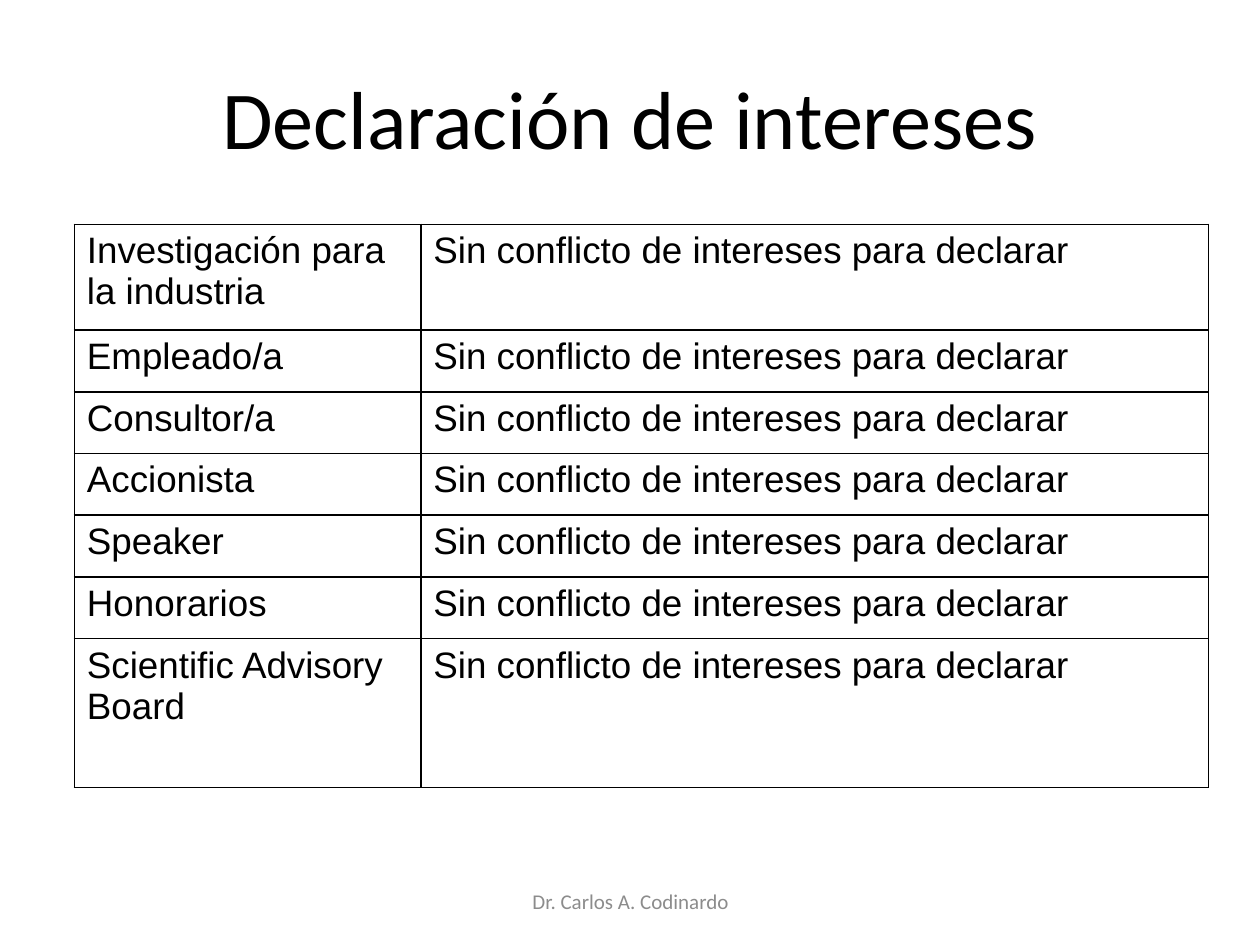
from lxml.etree import SubElement
from pptx import Presentation
from pptx.dml.color import RGBColor
from pptx.enum.text import MSO_ANCHOR, PP_ALIGN
from pptx.oxml.ns import qn
from pptx.util import Inches, Pt

BLACK = RGBColor(0x00, 0x00, 0x00)
GREY = RGBColor(0x8C, 0x8C, 0x8C)

TITLE = "Declaración de intereses"
AUTHOR = "Dr. Carlos A. Codinardo"
STATEMENT = "Sin conflicto de intereses para declarar"
ROW_HEIGHT = 0.49
INTERESTS = [
    ("Investigación para la industria", 0.84),
    ("Empleado/a", ROW_HEIGHT),
    ("Consultor/a", ROW_HEIGHT),
    ("Accionista", ROW_HEIGHT),
    ("Speaker", ROW_HEIGHT),
    ("Honorarios", ROW_HEIGHT),
    ("Scientific Advisory Board", 1.18),
]
COLUMN_WIDTHS = [2.75, 6.25]


def write(frame, text, *, size, font="Calibri", color=BLACK,
          align=PP_ALIGN.CENTER, anchor=MSO_ANCHOR.MIDDLE):
    frame.word_wrap = True
    frame.vertical_anchor = anchor
    paragraph = frame.paragraphs[0]
    paragraph.alignment = align
    run = paragraph.add_run()
    run.text = text
    run.font.size = Pt(size)
    run.font.name = font
    run.font.color.rgb = color


def outline(cell):
    properties = cell._tc.get_or_add_tcPr()
    for side in ("a:lnL", "a:lnR", "a:lnT", "a:lnB"):
        border = SubElement(properties, qn(side), w=str(Pt(1)))
        fill = SubElement(border, qn("a:solidFill"))
        SubElement(fill, qn("a:srgbClr"), val=str(BLACK))


def main():
    deck = Presentation()
    deck.slide_width, deck.slide_height = Inches(10), Inches(7.5)
    slide = deck.slides.add_slide(deck.slide_layouts[5])

    title = slide.shapes.title
    title.left, title.top = Inches(0.5), Inches(0.3)
    title.width, title.height = Inches(9), Inches(1.25)
    write(title.text_frame, TITLE, size=47)

    author = slide.shapes.add_textbox(
        Inches(3.42), Inches(6.95), Inches(3.17), Inches(0.4))
    write(author.text_frame, AUTHOR, size=12, color=GREY)

    table_height = sum(height for _, height in INTERESTS)
    declarations = slide.shapes.add_table(
        len(INTERESTS), len(COLUMN_WIDTHS), Inches(0.59), Inches(1.78),
        Inches(sum(COLUMN_WIDTHS)), Inches(table_height)).table
    declarations.first_row = False
    declarations.horz_banding = False
    for column, width in zip(declarations.columns, COLUMN_WIDTHS):
        column.width = Inches(width)
    for row, (interest, height) in zip(declarations.rows, INTERESTS):
        row.height = Inches(height)
        for cell, text in zip(row.cells, (interest, STATEMENT)):
            outline(cell)
            cell.fill.background()
            cell.vertical_anchor = MSO_ANCHOR.TOP
            write(cell.text_frame, text, size=21, font="Arial",
                  align=PP_ALIGN.LEFT, anchor=None)

    deck.save("out.pptx")


if __name__ == "__main__":
    main()
